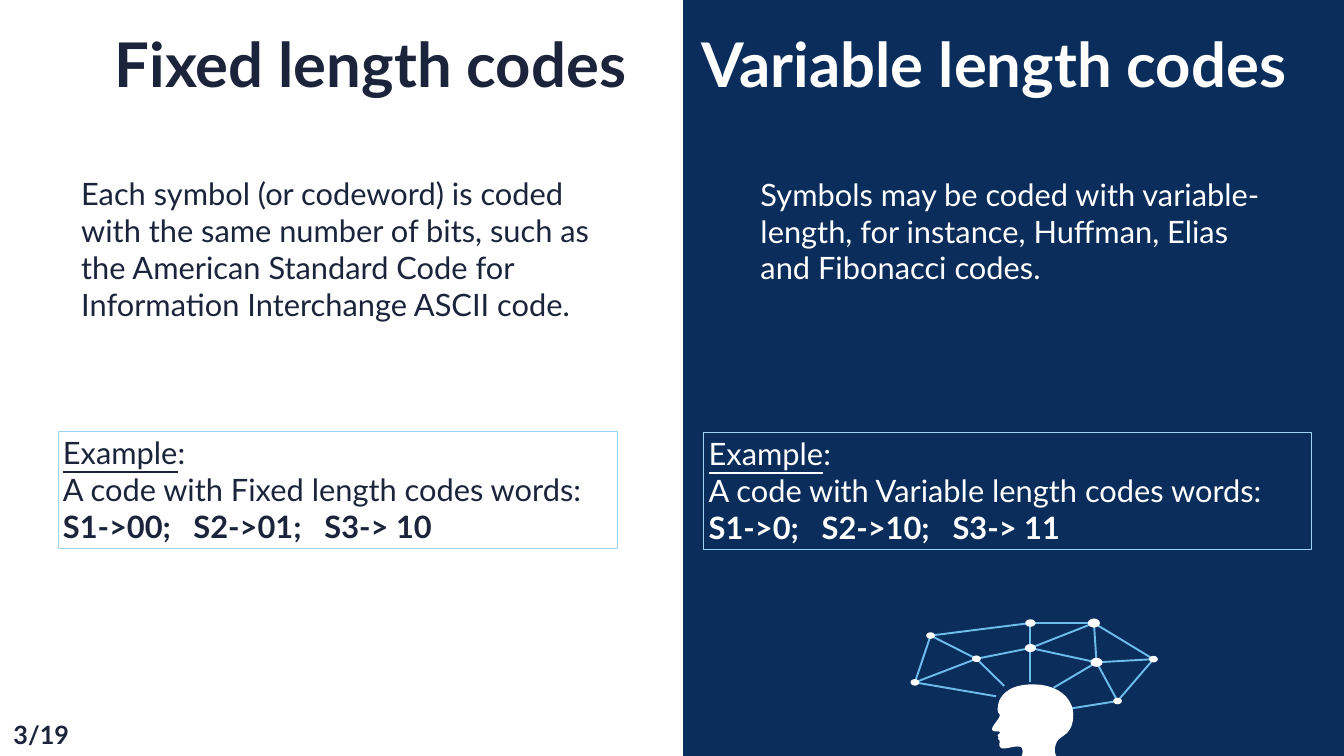
from lxml import etree
from pptx import Presentation
from pptx.dml.color import RGBColor
from pptx.enum.shapes import MSO_CONNECTOR, MSO_SHAPE
from pptx.enum.text import MSO_ANCHOR, MSO_AUTO_SIZE, PP_ALIGN
from pptx.oxml.ns import qn
from pptx.util import Cm, Pt

RECT, OVAL = MSO_SHAPE.RECTANGLE, MSO_SHAPE.OVAL
LINE = MSO_CONNECTOR.STRAIGHT
LEFT, RIGHT = PP_ALIGN.LEFT, PP_ALIGN.RIGHT
GROW, TOP = MSO_AUTO_SIZE.SHAPE_TO_FIT_TEXT, MSO_ANCHOR.TOP
NAVY, INK, WHITE = "0B2D5B", "1B243B", "FFFFFF"
SKY, PALE = "6CBCEC", "9DD2F2"


def paint(shape, color):
    """Fill a shape with one colour, without outline or shadow."""
    shape.shadow.inherit = False
    shape.fill.solid()
    shape.fill.fore_color.rgb = RGBColor.from_string(color)
    shape.line.fill.background()


def write(shape, paras, size, color, align=LEFT):
    """Fill a shape with paragraphs; each is a list of (text, bold, underline)."""
    frame = shape.text_frame
    frame.word_wrap = True
    frame.auto_size = GROW
    frame.vertical_anchor = TOP
    for num, runs in enumerate(paras):
        para = frame.paragraphs[0] if num == 0 else frame.add_paragraph()
        para.alignment = align
        for text, bold, under in runs:
            run = para.add_run()
            run.text = text
            font = run.font
            font.name, font.size = "Lato", Pt(size)
            font.bold, font.underline = bold, under
            font.color.rgb = RGBColor.from_string(color)


deck = Presentation()
deck.slide_width, deck.slide_height = Cm(67.72), Cm(38.1)
slide = deck.slides.add_slide(deck.slide_layouts[6])
shapes = slide.shapes

panel = shapes.add_shape(RECT, Cm(34.42), Cm(-0.66), Cm(33.86), Cm(38.79))
paint(panel, NAVY)

# Network of nodes around the head: centre x, centre y, width, height
nodes = {
    "a": (46.1, 34.39, 0.44, 0.33),
    "b": (46.89, 32.03, 0.44, 0.33),
    "c": (49.2, 33.2, 0.44, 0.33),
    "d": (51.92, 31.4, 0.52, 0.38),
    "e": (51.92, 32.66, 0.56, 0.41),
    "f": (55.12, 31.4, 0.61, 0.46),
    "g": (55.25, 33.38, 0.61, 0.46),
    "h": (58.12, 33.22, 0.44, 0.33),
    "i": (56.31, 35.33, 0.44, 0.33),
}
pairs = "ih gi gh fg fh df ef ce bd de bc ac ab eg".split()
links = [(nodes[s][:2], nodes[t][:2]) for s, t in pairs]
stubs = {"a": (50.19, 35.09), "c": (50.6, 34.57), "e": (51.92, 34.39),
         "g": (53.09, 34.66), "i": (53.92, 35.71)}
links += [(nodes[key][:2], end) for key, end in stubs.items()]

group = shapes.add_group_shape().shapes
for start, end in links:
    link = group.add_connector(LINE, *(Cm(v) for v in start + end))
    link.line.color.rgb = RGBColor.from_string(SKY)
    link.line.width = Pt(2.75)
    etree.SubElement(link._element.spPr, qn("a:effectLst"))

# Head outline: Bezier curves, each with two control points and an end
curves = [
    (51.23, 34.49, 50.72, 34.72, 50.42, 35.18),
    (50.29, 35.36, 50.22, 35.86, 50.32, 35.94),
    (50.55, 36.12, 49.99, 36.5, 49.99, 36.75),
    (49.99, 36.91, 50.29, 36.83, 50.37, 36.88),
    (50.44, 36.93, 50.27, 37.03, 50.27, 37.06),
    (50.27, 37.13, 50.34, 37.16, 50.39, 37.16),
    (50.39, 37.16, 50.29, 37.13, 50.29, 37.21),
    (50.29, 37.29, 50.39, 37.26, 50.37, 37.41),
    (50.34, 37.54, 50.34, 37.72, 50.57, 37.72),
    (50.83, 37.72, 51.16, 37.57, 51.41, 37.64),
    (51.59, 37.69, 51.54, 38.1, 51.41, 38.18),
    (51.41, 38.18, 53.29, 38.18, 53.29, 38.18),
    (53.29, 38.18, 53.01, 37.95, 53.24, 37.41),
    (53.42, 37.03, 54.08, 37.08, 54.08, 36.02),
    (54.08, 35.18, 53.29, 34.49, 52.07, 34.49),
]
steps = 10
x, y = curves[-1][4:]
pen = group.build_freeform(Cm(x), Cm(y))
dots = []
for x1, y1, x2, y2, x3, y3 in curves:
    for step in range(1, steps + 1):
        t = step / steps
        u = 1 - t
        w = (u ** 3, 3 * u * u * t, 3 * u * t * t, t ** 3)
        dots.append((Cm(w[0] * x + w[1] * x1 + w[2] * x2 + w[3] * x3),
                     Cm(w[0] * y + w[1] * y1 + w[2] * y2 + w[3] * y3)))
    x, y = x3, y3
pen.add_line_segments(dots)
paint(pen.convert_to_shape(), WHITE)

for x, y, wide, high in nodes.values():
    node = group.add_shape(OVAL, Cm(x - wide / 2), Cm(y - high / 2), Cm(wide), Cm(high))
    paint(node, WHITE)

# Plain text: left, top, width, height, text, size, colour, bold, alignment
texts = [
    (3.38, 1.19, 28.42, 4.01, "Fixed length codes", 88, INK, True, RIGHT),
    (35.1, 1.19, 32, 4.01, "Variable length codes", 88, WHITE, True, LEFT),
    (3.84, 8.69, 28.19, 7.77,
     "Each symbol (or codeword) is coded with the same number of bits, such as "
     "the American Standard Code for Information Interchange ASCII code.",
     44, INK, False, LEFT),
    (38.07, 8.71, 26.85, 5.89,
     "Symbols may be coded with variable-length, for instance, Huffman, Elias "
     "and Fibonacci codes.", 44, WHITE, False, LEFT),
    (0.43, 36.12, 4.37, 1.8, "3/19", 36, INK, True, LEFT),
]
for x, y, wide, high, text, size, color, bold, align in texts:
    box = shapes.add_textbox(Cm(x), Cm(y), Cm(wide), Cm(high))
    write(box, [[(text, bold, False)]], size, color, align)

# Framed examples: left, top, width, kind, codes, first tab stop, colour
frames = [
    (2.92, 21.72, 28.19, "Fixed", ("S1->00;", "S2->01;", "S3-> 10"), 6.58, INK),
    (35.46, 21.77, 30.61, "Variable", ("S1->0;", "S2->10;", "S3-> 11"), 5.69, WHITE),
]
for x, y, wide, kind, codes, stop, color in frames:
    box = shapes.add_shape(RECT, Cm(x), Cm(y), Cm(wide), Cm(5.89))
    box.shadow.inherit = False
    box.fill.background()
    box.line.color.rgb = RGBColor.from_string(PALE)
    box.line.width = Pt(0.75)
    write(box, [
        [("Example", False, True), (":", False, False)],
        [(f"A code with {kind} length codes words:", False, False)],
        [("\t".join(codes), True, False)],
    ], 44, color)
    props = box.text_frame.paragraphs[-1]._p.get_or_add_pPr()
    tabs = etree.SubElement(props, qn("a:tabLst"))
    for place in (stop, stop + 6.6):
        etree.SubElement(tabs, qn("a:tab"), pos=str(Cm(place)), algn="l")

deck.save("out.pptx")
